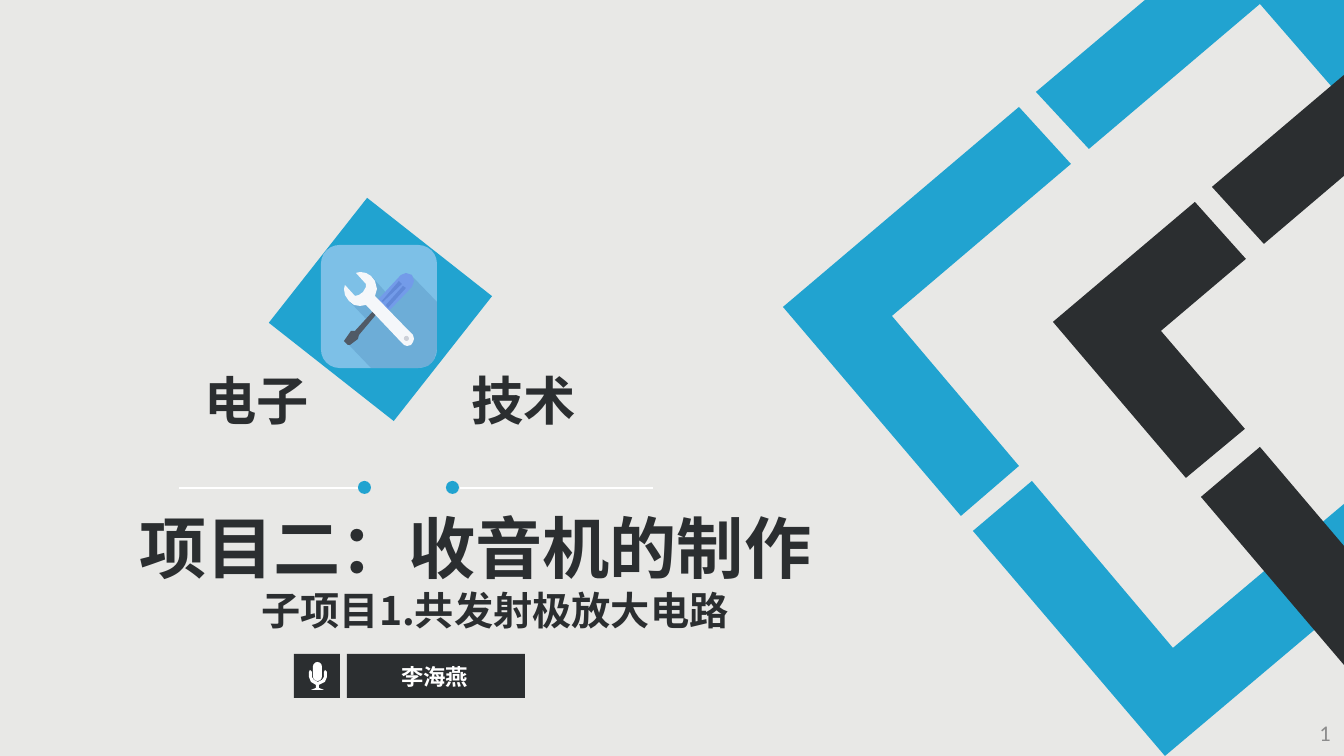
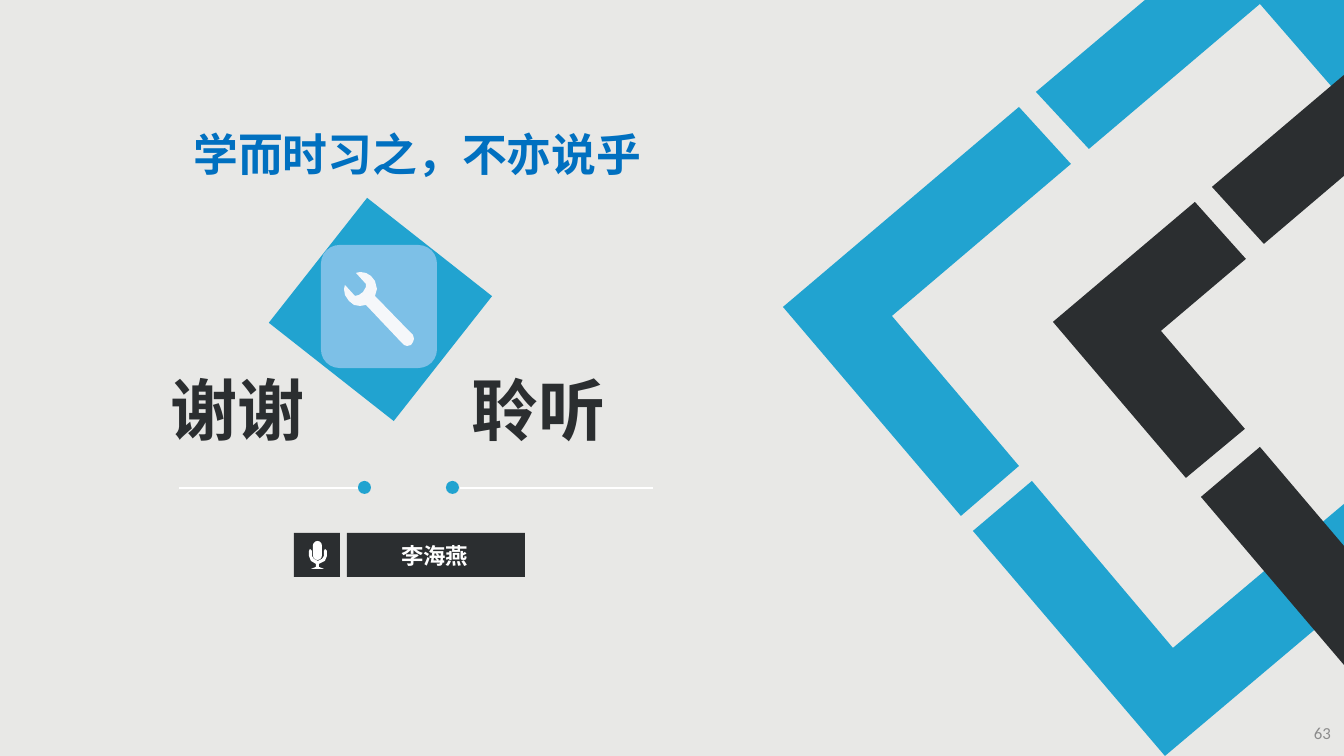
from lxml.etree import SubElement
from pptx import Presentation
from pptx.dml.color import RGBColor
from pptx.enum.shapes import MSO_CONNECTOR, MSO_SHAPE as SHAPE
from pptx.enum.text import MSO_ANCHOR, PP_ALIGN as ALIGN
from pptx.oxml.ns import qn
from pptx.util import Pt

PX = 914400 / 134.4
COLORS = {
    "paper": "E8E8E6", "blue": "21A3D0", "dark": "2B2E30", "white": "FFFFFF",
    "tile": "7DC0E7", "shade": "6DADD7", "handle": "739BE9", "groove": "6188D8",
    "shaft": "505A66", "wrench": "F5F7FA", "hole": "CCD0D8",
    "motto": "0070C0", "number": "8C8C8C",
}
COLORS = {name: RGBColor.from_string(value) for name, value in COLORS.items()}
CJK = "Noto Sans CJK SC"


def draw(s, color, geometry, kind=None):
    if kind:
        sp = s.shapes.add_shape(kind, *(round(v * PX) for v in geometry))
    else:
        fb = s.shapes.build_freeform(*geometry[0][0], scale=PX)
        fb.add_line_segments(geometry[0][1:], close=True)
        for contour in geometry[1:]:
            fb.move_to(*contour[0])
            fb.add_line_segments(contour[1:], close=True)
        sp = fb.convert_to_shape()
    sp.shadow.inherit = False
    sp.fill.solid()
    sp.fill.fore_color.rgb = COLORS[color]
    sp.line.fill.background()
    return sp


def write(s, box, lines, color, font=CJK):
    tf = s.shapes.add_textbox(*(round(v * PX) for v in box)).text_frame
    tf.word_wrap = True
    tf.vertical_anchor = MSO_ANCHOR.MIDDLE
    tf.text = "\n".join(words for words, size, align in lines)
    for p, (words, size, align) in zip(tf.paragraphs, lines):
        p.alignment = align
        r = p.runs[0]
        r.font.size = Pt(size)
        r.font.bold = font == CJK
        r.font.name = font
        r.font.color.rgb = COLORS[color]
        SubElement(r.font._element, qn("a:ea"), typeface=font)


BLUE_BANDS = [
    [(1032, 481), (1173, 648), (1344, 504), (1344, 605), (1165, 756), (973, 531)],
    [(1019, 107), (1071, 164), (892, 316), (1019, 466), (961, 516), (783, 307)],
    [(1145, 0), (1344, 0), (1344, 102), (1332, 87), (1260, 4), (1089, 149), (1036, 92)],
]
DARK_BANDS = [
    [(1260, 447), (1344, 546), (1344, 665), (1201, 497)],
    [(1195, 202), (1246, 259), (1161, 331), (1245, 429), (1186, 478), (1053, 322)],
    [(1344, 75), (1344, 176), (1264, 244), (1212, 187)],
]
WRENCH = [
    (345, 285), (344, 289), (345, 295), (349, 301), (354, 305), (360, 306), (366, 305),
    (402, 343), (404, 345), (407, 346), (411, 345), (413, 342), (414, 339), (413, 335),
    (411, 333), (375, 296), (377, 289), (375, 281), (371, 276), (366, 273), (360, 272),
    (356, 273), (366, 284), (366, 287), (363, 292), (359, 295), (355, 296),
]
SHADE = [
    (437, 302), (411, 275), (390, 297), (372, 277), (368, 281), (366, 294), (353, 297),
    (349, 301), (368, 321), (347, 343), (371, 368), (419, 368), (428, 366), (434, 360),
    (437, 349),
]
HANDLE = [(414, 281), (412, 275), (406, 273), (401, 275), (374, 304), (384, 316), (412, 287)]
SHAFT = [
    (355, 331), (351, 331), (344, 341), (348, 345), (350, 345), (358, 339), (359, 335),
    (380, 310), (376, 308),
]
GROOVES = [
    [(383, 302), (382, 301), (399, 281), (402, 284)],
    [(388, 308), (386, 305), (403, 286), (406, 288)],
]
MIC_STAND = [
    (327, 23), (327, 18), (325, 16), (324, 18), (324, 23), (322, 26), (318, 28), (314, 26),
    (312, 23), (312, 18), (310, 16), (309, 18), (309, 23), (311, 28), (316, 31), (316, 34),
    (311, 36), (324, 36), (319, 34), (319, 31), (325, 28),
]

SLIDES = [
    {
        "badge": 654,
        "tools": [("shade", [SHADE]), ("handle", [HANDLE]), ("shaft", [SHAFT]), ("groove", GROOVES)],
        "number": ("1", 12),
        "texts": [
            ((191, 361, 164, 77), [("电子", 28, None)], "dark"),
            ((458, 361, 152, 77), [("技术", 28, None)], "dark"),
            ((126, 499, 738, 142), [("项目二：收音机的制作", 36, None),
                                    ("子项目1.共发射极放大电路", 21, ALIGN.CENTER)], "dark"),
        ],
    },
    {
        "badge": 533,
        "tools": [],
        "number": ("63", 9),
        "texts": [
            ((157, 361, 230, 95), [("谢谢", 36, None)], "dark"),
            ((458, 361, 230, 95), [("聆听", 36, None)], "dark"),
            ((180, 120, 531, 67), [("学而时习之，不亦说乎", 24, None)], "motto"),
        ],
    },
]

prs = Presentation()
prs.slide_width, prs.slide_height = round(1344 * PX), round(756 * PX)

for page in SLIDES:
    s = prs.slides.add_slide(prs.slide_layouts[6])
    s.background.fill.solid()
    s.background.fill.fore_color.rgb = COLORS["paper"]
    draw(s, "blue", BLUE_BANDS)
    draw(s, "dark", DARK_BANDS)

    for start, end, dot in [(362, 179, 358), (460, 653, 446)]:
        ends = (round(v * PX) for v in (start, 488, end, 488))
        rule = s.shapes.add_connector(MSO_CONNECTOR.STRAIGHT, *ends)
        rule.line.color.rgb = COLORS["white"]
        rule.line.width = Pt(1.5)
        SubElement(rule._element.spPr, qn("a:effectLst"))
        draw(s, "blue", (dot, 481, 13, 13), SHAPE.OVAL)

    top = page["badge"]
    draw(s, "dark", (294, top, 46, 44), SHAPE.RECTANGLE)
    draw(s, "white", [[(x, y + top) for x, y in MIC_STAND]])
    mic = draw(s, "white", (313, top + 8, 9, 19), SHAPE.ROUNDED_RECTANGLE)
    mic.adjustments[0] = 0.5
    draw(s, "dark", (347, top, 178, 44), SHAPE.RECTANGLE)
    write(s, (388, top + 3, 114, 40), [("李海燕", 12, None)], "white")

    diamond = draw(s, "blue", (301, 230, 159, 159), SHAPE.RECTANGLE)
    diamond.rotation = 38.2
    tile = draw(s, "tile", (321, 245, 116, 123), SHAPE.ROUNDED_RECTANGLE)
    tile.adjustments[0] = 0.16
    for color, contours in page["tools"]:
        draw(s, color, contours)
    draw(s, "wrench", [WRENCH])
    if page["tools"]:
        draw(s, "hole", (404, 336, 5, 5), SHAPE.OVAL)

    for box, lines, color in page["texts"]:
        write(s, box, lines, color)
    write(s, (1042, 713, 302, 40), [(*page["number"], ALIGN.RIGHT)], "number", "Calibri")

prs.save("out.pptx")
